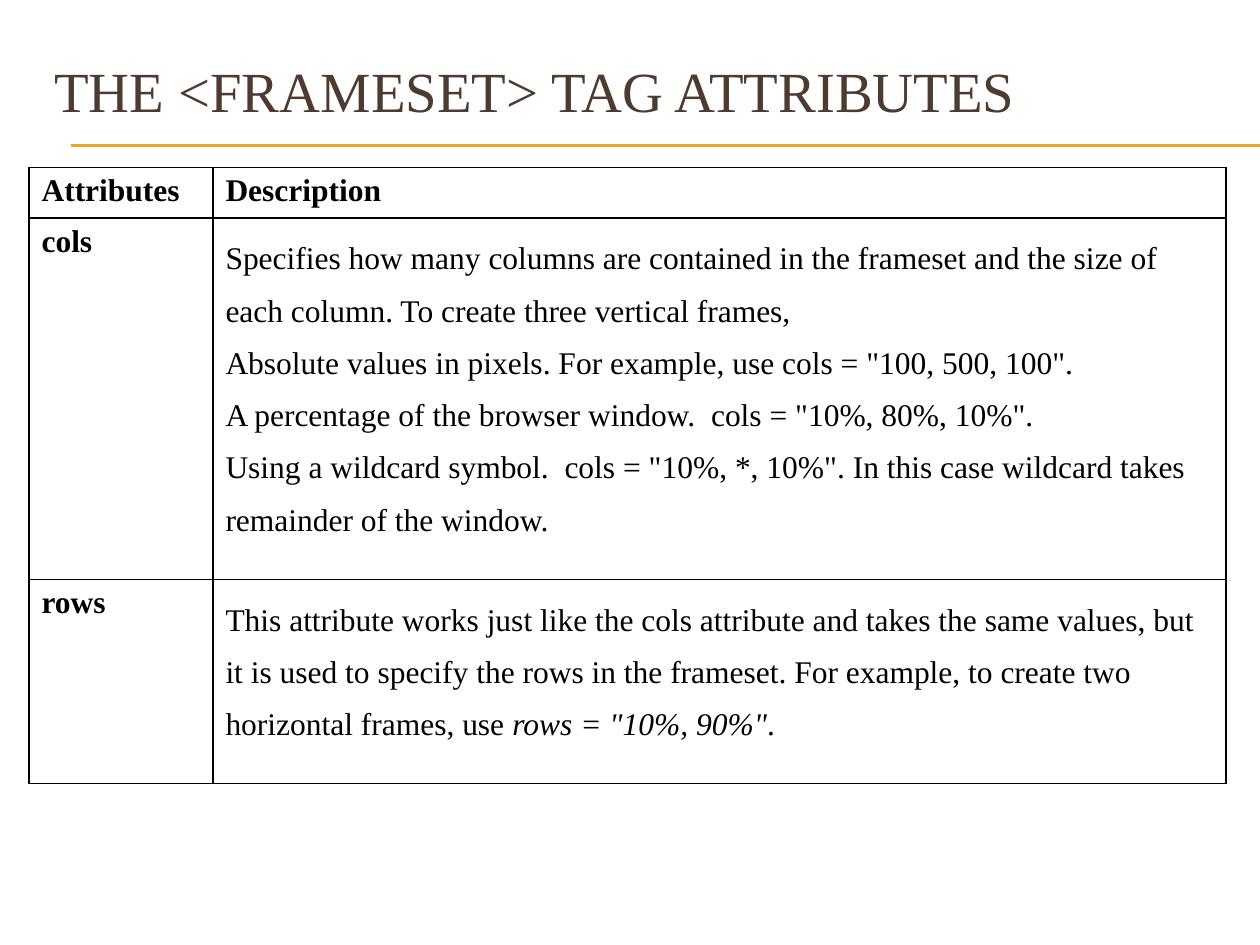
from lxml import etree
from pptx import Presentation
from pptx.dml.color import RGBColor
from pptx.enum.shapes import MSO_CONNECTOR
from pptx.enum.text import MSO_ANCHOR, MSO_AUTO_SIZE, PP_ALIGN
from pptx.oxml import parse_xml
from pptx.oxml.ns import nsdecls, qn
from pptx.util import Inches, Pt

STRAIGHT = MSO_CONNECTOR.STRAIGHT
TOP = MSO_ANCHOR.TOP
LEFT = PP_ALIGN.LEFT
NO_AUTOFIT = MSO_AUTO_SIZE.NONE
TITLE_ONLY = 5

THEME = {
    "font": "Times New Roman",
    "title_size": Pt(32.4),
    "table_size": Pt(18),
    "title": RGBColor.from_string("4E3B30"),
    "text": RGBColor.from_string("000000"),
    "rule": RGBColor.from_string("F0A22E"),
    "border": "000000",
}

# Each cell is a list of paragraphs, each paragraph a list of (text, format).
BOLD = {"bold": True}
PLAIN = {"bold": False}
ITALIC = {"bold": False, "italic": True}
ROWS = [
    [[[("Attributes", BOLD)]], [[("Description", BOLD)]]],
    [
        [[("cols", BOLD)]],
        [
            [("Specifies how many columns are contained in the frameset and the size of "
              "each column. To create three vertical frames,", PLAIN)],
            [('Absolute values in pixels. For example, use cols = "100, 500, 100".', PLAIN)],
            [('A percentage of the browser window.  cols = "10%, 80%, 10%".', PLAIN)],
            [('Using a wildcard symbol.  cols = "10%, *, 10%". In this case wildcard takes '
              "remainder of the window.", PLAIN)],
        ],
    ],
    [
        [[("rows", BOLD)]],
        [
            [("This attribute works just like the cols attribute and takes the same values, "
              "but it is used to specify the rows in the frameset. For example, to create two "
              "horizontal frames, use ", PLAIN),
             ('rows = "10%, 90%"', ITALIC),
             (".", PLAIN)],
        ],
    ],
]
COLUMN_WIDTHS = [1.46, 8.04]
ROW_HEIGHTS = [0.4, 2.87, 1.62]


def add_span(para, text, size, color, **formats):
    span = para.add_run()
    span.text = text
    span.font.color.rgb = color
    for name, value in {"name": THEME["font"], "size": size, **formats}.items():
        setattr(span.font, name, value)


def add_borders(cell):
    """Line all four sides; border elements must come before the cell's fill."""
    properties = cell._tc.get_or_add_tcPr()
    for index, side in enumerate(("lnL", "lnR", "lnT", "lnB")):
        properties.insert(index, parse_xml(
            f'<a:{side} {nsdecls("a")} w="{Pt(1)}"><a:solidFill>'
            f'<a:srgbClr val="{THEME["border"]}"/></a:solidFill></a:{side}>'))


deck = Presentation()
deck.slide_width, deck.slide_height = Inches(10), Inches(7.5)
page = deck.slides.add_slide(deck.slide_layouts[TITLE_ONLY])

# Double rule under the title
for height in (1.15, 1.16):
    rule = page.shapes.add_connector(
        STRAIGHT, Inches(0.56), Inches(height), Inches(10), Inches(height))
    rule.line.color.rgb = THEME["rule"]
    rule.line.width = Pt(0.75)
    etree.SubElement(rule._element.spPr, qn("a:effectLst"))

# Title
title = page.shapes.title
title.left, title.top = Inches(0.33), Inches(0.5)
title.width, title.height = Inches(9.5), Inches(0.92)
frame = title.text_frame
for name, value in {"vertical_anchor": TOP, "word_wrap": True, "auto_size": NO_AUTOFIT}.items():
    setattr(frame, name, value)
heading = frame.paragraphs[0]
heading.alignment = LEFT
heading.line_spacing = 0.8
add_span(heading, "THE <FRAMESET> TAG ATTRIBUTES", THEME["title_size"], THEME["title"])

# Attribute table
table = page.shapes.add_table(
    len(ROWS), len(COLUMN_WIDTHS), Inches(0.23), Inches(1.33),
    Inches(sum(COLUMN_WIDTHS)), Inches(sum(ROW_HEIGHTS))).table
table.first_row = table.horz_banding = False
for column, width in zip(table.columns, COLUMN_WIDTHS):
    column.width = Inches(width)
for row, height, contents in zip(table.rows, ROW_HEIGHTS, ROWS):
    row.height = Inches(height)
    for cell, paragraphs in zip(row.cells, contents):
        cell.fill.background()
        add_borders(cell)
        is_description = cell is not None and paragraphs[0][0][1] is PLAIN
        for number, spans in enumerate(paragraphs):
            para = cell.text_frame.add_paragraph() if number else cell.text_frame.paragraphs[0]
            if is_description:
                para.line_spacing = 1.5
            for text, formats in spans:
                add_span(para, text, THEME["table_size"], THEME["text"], **formats)

deck.save("out.pptx")
